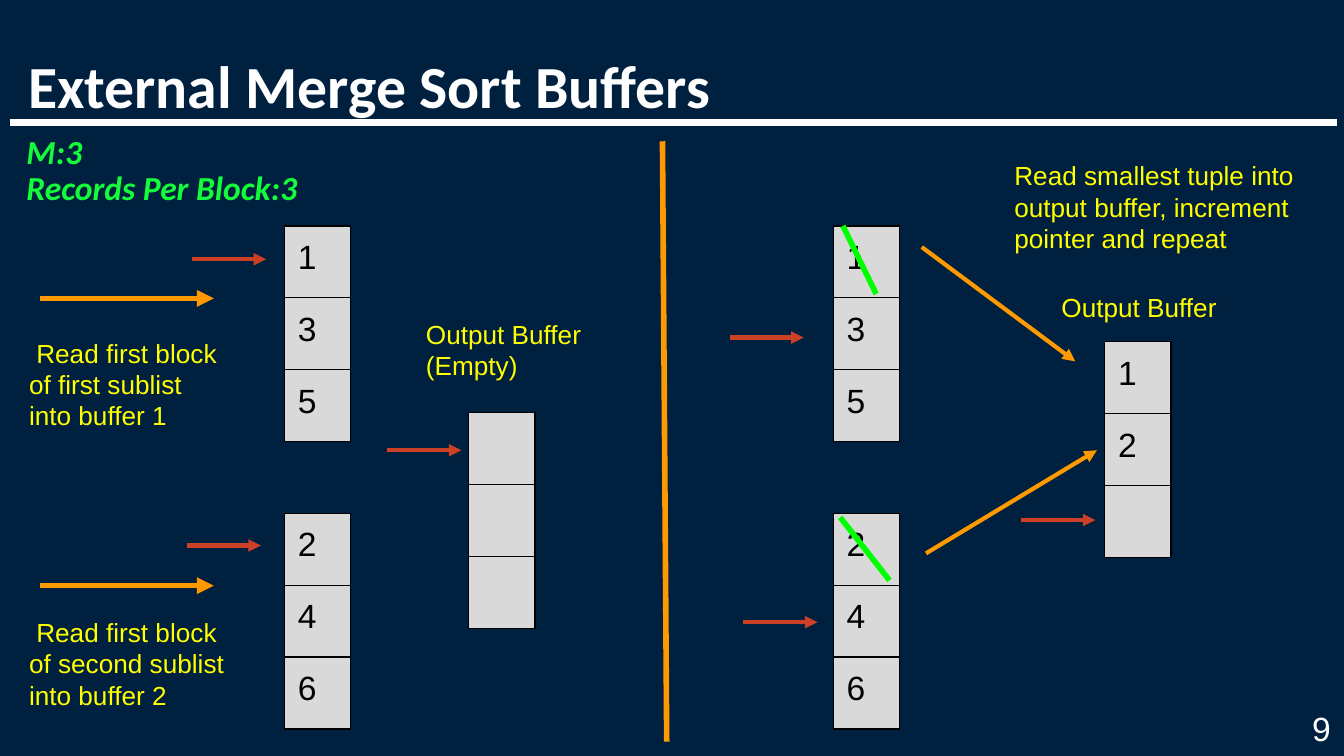
from lxml import etree
from pptx import Presentation
from pptx import util as u
from pptx.dml import color
from pptx.enum import shapes, text
from pptx.oxml import ns

NAVY = color.RGBColor(0x00, 0x20, 0x40)
WHITE = color.RGBColor(0xFF, 0xFF, 0xFF)
BLACK = color.RGBColor(0x00, 0x00, 0x00)
GREY = color.RGBColor(0xD9, 0xD9, 0xD9)
YELLOW = color.RGBColor(0xFF, 0xFF, 0x00)
ORANGE = color.RGBColor(0xFF, 0x99, 0x00)
RED = color.RGBColor(0xCC, 0x41, 0x25)
GREEN = color.RGBColor(0x00, 0xFF, 0x00)
LIME = color.RGBColor(0x14, 0xFD, 0x3A)

HEADING = {"name": "Calibri", "size": u.Pt(32), "bold": True}
FACTS = {"name": "Calibri", "size": u.Pt(18), "bold": True, "italic": True}
NOTE = {"name": "Arial", "size": u.Pt(14)}
VALUE = {"name": "Arial", "size": u.Pt(18)}

CELL_W, CELL_H = 1.25, 1.36
POINTER_LEN = 1.4


def add_xml(parent, tag, **attrs):
    return etree.SubElement(parent, ns.qn(tag), **attrs)


class BufferSlide:
    def __init__(self, prs):
        self.slide = prs.slides.add_slide(prs.slide_layouts[1])
        fill = self.slide.background.fill
        fill.solid()
        fill.fore_color.rgb = NAVY

    def styled_run(self, p, words, style, rgb):
        r = p.add_run()
        r.text = words
        for key, value in style.items():
            setattr(r.font, key, value)
        r.font.color.rgb = rgb

    def fill_frame(self, tf, lines, style, rgb, inset, para, anchor):
        frame = {"word_wrap": True, "auto_size": text.MSO_AUTO_SIZE.NONE,
                 "vertical_anchor": anchor,
                 "margin_left": u.Cm(inset[0]), "margin_right": u.Cm(inset[0]),
                 "margin_top": u.Cm(inset[1]), "margin_bottom": u.Cm(inset[1])}
        for key, value in frame.items():
            setattr(tf, key, value)
        for i, words in enumerate(lines):
            p = tf.add_paragraph() if i else tf.paragraphs[0]
            for key, value in para.items():
                setattr(p, key, value)
            self.styled_run(p, words, style, rgb)

    def placeholder(self, idx, box, lines, style, rgb, inset, anchor, indent=0):
        s = self.slide.placeholders[idx]
        s.left, s.top, s.width, s.height = map(u.Cm, box)
        para = {"alignment": text.PP_ALIGN.LEFT, "line_spacing": 0.89,
                "space_before": u.Pt(0)}
        self.fill_frame(s.text_frame, lines, style, rgb, inset, para, anchor)
        for p in s.text_frame.paragraphs:
            pPr = p._p.get_or_add_pPr()
            pPr.set("marL", str(u.Cm(indent)))
            pPr.set("indent", "0")
            add_xml(pPr, "a:buNone")

    def label(self, box, lines, style=NOTE, rgb=YELLOW, inset=(0.25, 0.25),
              align=text.PP_ALIGN.LEFT):
        s = self.slide.shapes.add_textbox(*map(u.Cm, box))
        self.fill_frame(s.text_frame, lines, style, rgb, inset,
                        {"alignment": align}, text.MSO_ANCHOR.TOP)

    def line(self, start, end, rgb, width, arrow=False):
        s = self.slide.shapes.add_connector(
            shapes.MSO_CONNECTOR.STRAIGHT, *map(u.Cm, start + end))
        s.line.color.rgb = rgb
        s.line.width = u.Pt(width)
        spPr = s._element.spPr
        if arrow:
            add_xml(spPr.find(ns.qn("a:ln")), "a:tailEnd", type="triangle")
        add_xml(spPr, "a:effectLst")

    def buffer(self, left, top, values):
        tbl = self.slide.shapes.add_table(
            len(values), 1, u.Cm(left), u.Cm(top),
            u.Cm(CELL_W), u.Cm(CELL_H * len(values))).table
        tbl.first_row = tbl.horz_banding = False
        for i, value in enumerate(values):
            cell = tbl.cell(i, 0)
            for side in ("left", "right", "top", "bottom"):
                setattr(cell, f"margin_{side}", u.Cm(0.25))
            if value:
                self.styled_run(cell.text_frame.paragraphs[0], value, VALUE, BLACK)
            tcPr = cell._tc.get_or_add_tcPr()
            for edge in ("a:lnL", "a:lnR", "a:lnT", "a:lnB"):
                ln = add_xml(tcPr, edge, w=str(u.Pt(0.75)))
                add_xml(add_xml(ln, "a:solidFill"), "a:srgbClr", val=str(BLACK))
            cell.fill.solid()
            cell.fill.fore_color.rgb = GREY


def main():
    prs = Presentation()
    prs.slide_width, prs.slide_height = u.Cm(25.4), u.Cm(14.29)
    page = BufferSlide(prs)

    page.line((0.18, 2.31), (25.27, 2.31), WHITE, 3.75)
    page.label((24.31, 13.39, 0.84, 0.53), ["9"], VALUE, WHITE, (0, 0),
               text.PP_ALIGN.RIGHT)
    page.placeholder(0, (0.28, 0, 24.97, 2.29), ["External Merge Sort Buffers"],
                     HEADING, WHITE, (0.25, 0), text.MSO_ANCHOR.BOTTOM)
    page.placeholder(1, (0, 2.44, 8.86, 1.65), ["M:3", "Records Per Block:3"],
                     FACTS, LIME, (0.25, 0.13), text.MSO_ANCHOR.TOP, 0.25)

    for left in (5.38, 15.75):
        page.buffer(left, 4.27, "135")
        page.buffer(left, 9.7, "246")
    page.buffer(8.86, 7.8, ["", "", ""])
    page.buffer(20.88, 6.46, ["1", "2", ""])

    page.label((0.3, 6.12, 4.22, 2.39),
               [" Read first block of first sublist into buffer 1"])
    page.label((0.3, 11.4, 4.22, 2.39),
               [" Read first block of second sublist into buffer 2"])
    page.label((7.8, 5.77, 3.94, 1.73), ["Output Buffer", "(Empty)"])
    page.label((18.92, 2.77, 5.89, 1.96),
               ["Read smallest tuple into output buffer, increment pointer and repeat"])
    page.label((19.81, 5.26, 4.22, 1.02), ["Output Buffer"])

    page.line((12.52, 2.67), (12.6, 14.02), ORANGE, 3)
    for y in (5.64, 11.07):
        page.line((0.76, y), (4.04, y), ORANGE, 3, arrow=True)
    page.line((15.93, 4.27), (16.56, 5.56), GREEN, 3)
    page.line((15.88, 9.78), (16.81, 10.97), GREEN, 3)
    page.line((17.42, 4.67), (20.32, 6.83), ORANGE, 2.25, arrow=True)
    page.line((17.5, 10.46), (20.73, 8.51), ORANGE, 2.25, arrow=True)
    for x, y in ((13.79, 6.38), (14.05, 11.76), (7.32, 8.51),
                 (19.3, 9.83), (3.63, 4.9), (3.53, 10.31)):
        page.line((x, y), (x + POINTER_LEN, y), RED, 2.25, arrow=True)

    prs.save("out.pptx")


if __name__ == "__main__":
    main()
